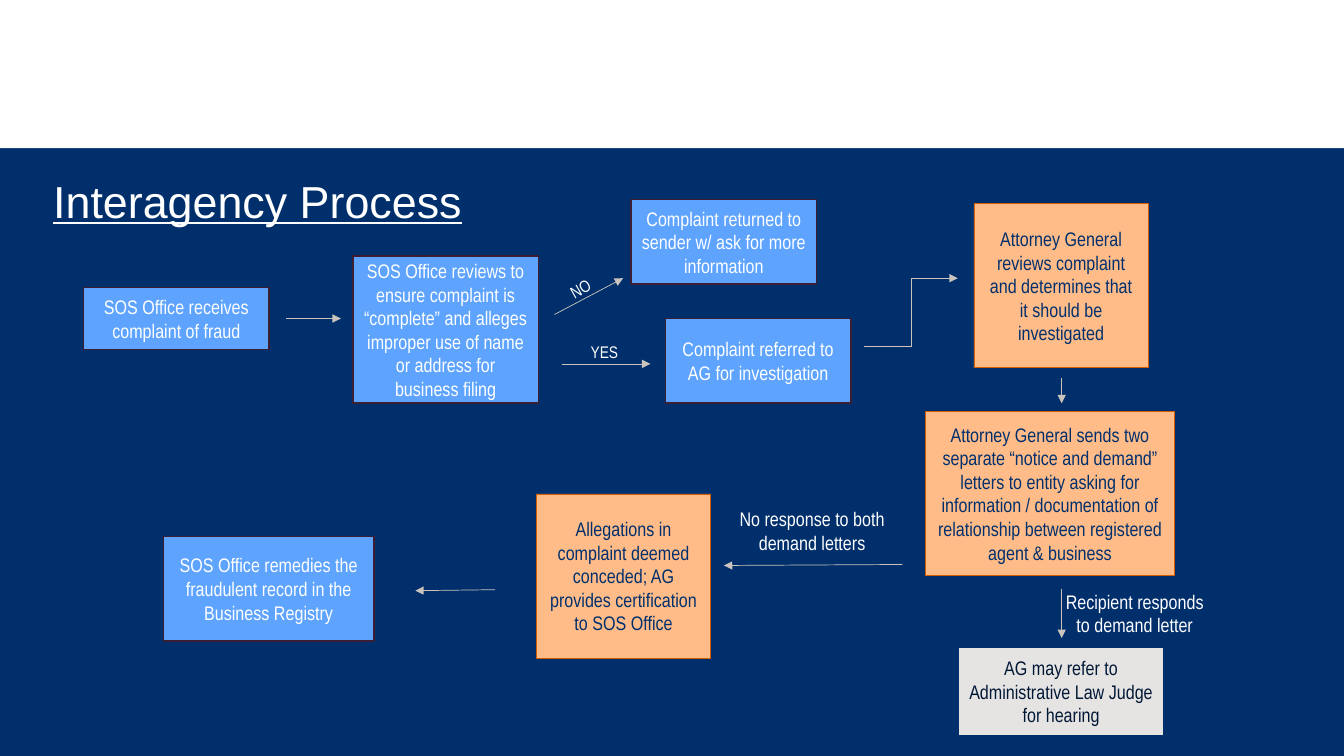
from lxml import etree
from pptx import Presentation
from pptx.dml.color import RGBColor
from pptx.enum import shapes, text
from pptx.oxml.ns import qn
from pptx.util import Inches, Pt

THEME = {
    "back": "002F6C", "band": "FFFFFF", "light": "FFFFFF", "arrow": "CBC4BC",
    "head": ("Arial", 32), "body": ("Arial Narrow", 14), "tag": ("Arial Narrow", 12),
    # fill, line, line width, text colour
    "sos": ("5EA4FF", "3C1F32", 1, "FFFFFF"),
    "ag": ("FFBC88", "D45D00", 0.5, "002F6C"),
    "judge": ("E6E4E2", "002F6C", 0.5, "001736"),
}

TITLE = ("Interagency Process", (0.43, 1.52, 11.5, 1))

STEPS = [
    ("sos", (0.83, 2.85, 1.84, 0.62), "SOS Office receives complaint of fraud"),
    ("sos", (3.5, 2.54, 1.84, 1.46),
     "SOS Office reviews to ensure complaint is “complete” and alleges "
     "improper use of name or address for business filing"),
    ("sos", (6.26, 1.98, 1.84, 0.84),
     "Complaint returned to sender w/ ask for more information"),
    ("sos", (6.6, 3.16, 1.84, 0.84), "Complaint referred to AG for investigation"),
    ("ag", (9.66, 2.02, 1.73, 1.63),
     "Attorney General reviews complaint and determines that it should be investigated"),
    ("ag", (9.18, 4.08, 2.47, 1.63),
     "Attorney General sends two separate “notice and demand” letters to entity "
     "asking for information / documentation of relationship between registered "
     "agent & business"),
    ("ag", (5.32, 4.9, 1.73, 1.63),
     "Allegations in complaint deemed conceded; AG provides certification to SOS Office"),
    ("sos", (1.62, 5.32, 2.09, 1.04),
     "SOS Office remedies the fraudulent record in the Business Registry"),
    ("judge", (9.51, 6.42, 2.03, 0.88),
     "AG may refer to Administrative Law Judge for hearing"),
]

# text, place, type, centred, turn
LABELS = [
    ("NO", (5.5, 2.51, 1.24, 0.3), "tag", False, 330.5),
    ("YES", (5.76, 3.34, 1.24, 0.3), "tag", False, 0),
    ("No response to both demand letters", (7.22, 4.98, 1.67, 0.57), "body", True, 0),
    ("Recipient responds to demand letter", (10.42, 5.8, 1.67, 0.57), "body", True, 0),
]

# kind, then from x, y and to x, y
ARROWS = [
    ("STRAIGHT", (2.84, 3.16, 3.38, 3.16)),
    ("STRAIGHT", (5.5, 3.12, 6.18, 2.76)),
    ("STRAIGHT", (5.57, 3.61, 6.45, 3.61)),
    ("ELBOW", (8.57, 3.44, 9.5, 2.76)),
    ("STRAIGHT", (10.53, 3.75, 10.53, 4)),
    ("STRAIGHT", (8.95, 5.6, 7.18, 5.61)),
    ("STRAIGHT", (4.91, 5.85, 4.12, 5.86)),
    ("STRAIGHT", (10.53, 5.84, 10.53, 6.33)),
]


def rgb(code):
    return RGBColor.from_string(code)


def place(at):
    return [Inches(v) for v in at]


def write(shape, words, style, color, center=True, middle=True, **extra):
    """Fill a shape with one formatted paragraph."""
    frame = shape.text_frame
    frame.word_wrap = True
    frame.vertical_anchor = text.MSO_ANCHOR.MIDDLE if middle else text.MSO_ANCHOR.TOP
    para = frame.paragraphs[0]
    para.alignment = text.PP_ALIGN.CENTER if center else text.PP_ALIGN.LEFT
    run = para.add_run()
    run.text = words
    name, size = THEME[style]
    for key, value in {"name": name, "size": Pt(size), **extra}.items():
        setattr(run.font, key, value)
    run.font.color.rgb = rgb(color)
    return para


def block(slide, at, fill):
    shape = slide.shapes.add_shape(shapes.MSO_SHAPE.RECTANGLE, *place(at))
    shape.shadow.inherit = False
    shape.fill.solid()
    shape.fill.fore_color.rgb = rgb(fill)
    shape.line.fill.background()
    return shape


def step(slide, kind, at, words):
    fill, edge, width, color = THEME[kind]
    shape = block(slide, at, fill)
    shape.line.color.rgb = rgb(edge)
    shape.line.width = Pt(width)
    write(shape, words, "body", color)


def label(slide, words, at, style, center, turn):
    box = slide.shapes.add_textbox(*place(at))
    box.rotation = turn
    write(box, words, style, THEME["light"], center, middle=False)


def arrow(slide, kind, ends):
    link = slide.shapes.add_connector(shapes.MSO_CONNECTOR[kind], *place(ends))
    link.line.color.rgb = rgb(THEME["arrow"])
    link.line.width = Pt(0.5)
    props = link.line._get_or_add_ln()
    etree.SubElement(props, qn("a:tailEnd")).set("type", "triangle")
    etree.SubElement(props.getparent(), qn("a:effectLst"))


def main():
    deck = Presentation()
    deck.slide_width, deck.slide_height = Inches(13.33), Inches(7.5)
    slide = deck.slides.add_slide(deck.slide_layouts[6])
    slide.background.fill.solid()
    slide.background.fill.fore_color.rgb = rgb(THEME["back"])
    block(slide, (0, 0, 13.33, 1.47), THEME["band"])

    words, at = TITLE
    head = slide.shapes.add_textbox(*place(at))
    para = write(head, words, "head", THEME["light"], center=False, underline=True)
    para.line_spacing = 0.9

    for draw, items in ((step, STEPS), (arrow, ARROWS), (label, LABELS)):
        for item in items:
            draw(slide, *item)
    deck.save("out.pptx")


if __name__ == "__main__":
    main()
